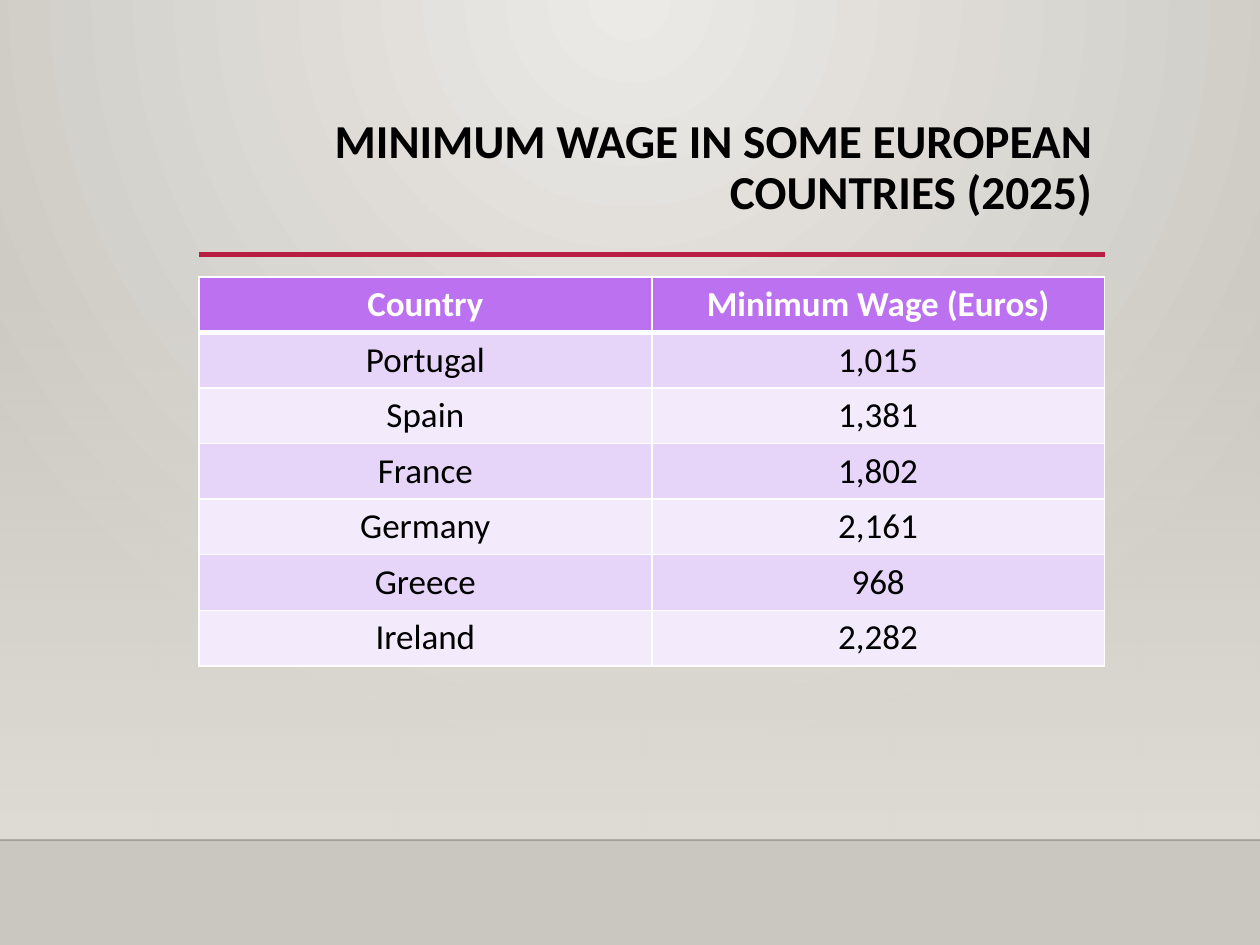
from lxml.etree import SubElement
from pptx import Presentation
from pptx.dml.color import RGBColor
from pptx.enum.shapes import MSO_CONNECTOR, MSO_SHAPE
from pptx.enum.text import MSO_ANCHOR, MSO_AUTO_SIZE, PP_ALIGN
from pptx.oxml.ns import qn
from pptx.util import Pt

BLACK = RGBColor(0x00, 0x00, 0x00)
WHITE = RGBColor(0xFF, 0xFF, 0xFF)
RED = RGBColor(0xB7, 0x1E, 0x42)
WALL_LIGHT = RGBColor(0xEC, 0xEA, 0xE7)
WALL_DARK = RGBColor(0xCA, 0xC7, 0xC1)
WALL_GLOW = RGBColor(0xDF, 0xDB, 0xD5)
HEADER_FILL = RGBColor(0xBC, 0x72, 0xF0)
BAND_FILLS = (RGBColor(0xE7, 0xD5, 0xF9), RGBColor(0xF3, 0xEB, 0xFC))

FONT = "Calibri"
WIDTH, HEIGHT = 720, 540
LEFT, CONTENT_WIDTH = 113.7, 517.5
WALL_TOP, FLOOR_TOP = 158.4, 480

WAGES = [
    ("Country", "Minimum Wage (Euros)"),
    ("Portugal", "1,015"),
    ("Spain", "1,381"),
    ("France", "1,802"),
    ("Germany", "2,161"),
    ("Greece", "968"),
    ("Ireland", "2,282"),
]


def write_text(frame, text, size=20, color=BLACK, bold=False,
               align=PP_ALIGN.CENTER, line_spacing=None):
    paragraph = frame.paragraphs[0]
    paragraph.alignment = align
    paragraph.line_spacing = line_spacing
    run = paragraph.add_run()
    run.text = text
    run.font.name = FONT
    run.font.size = Pt(size)
    run.font.bold = bold
    run.font.color.rgb = color


def set_gradient(fill, first, last):
    fill.gradient()
    for stop, color in zip(fill.gradient_stops, (first, last)):
        stop.color.rgb = color


def set_alpha(properties, percent):
    color = next(properties.iter(qn("a:srgbClr")))
    SubElement(color, qn("a:alpha"), val=str(percent * 1000))


def add_rule(slide, left, top, width, color, weight, opacity=100):
    line = slide.shapes.add_connector(
        MSO_CONNECTOR.STRAIGHT, Pt(left), Pt(top), Pt(left + width), Pt(top))
    line.line.color.rgb = color
    line.line.width = Pt(weight)
    properties = line._element.spPr
    if opacity < 100:
        set_alpha(properties, opacity)
    SubElement(properties, qn("a:effectLst"))


def add_backdrop(slide, left, top, width, height):
    # Radial light from the top centre
    set_gradient(slide.background.fill, WALL_LIGHT, WALL_DARK)
    gradient = next(slide._element.iter(qn("a:gradFill")))
    gradient.remove(gradient.find(qn("a:lin")))
    radial = SubElement(gradient, qn("a:path"), path="circle")
    SubElement(radial, qn("a:fillToRect"), l="43000", t="0", r="43000", b="100000")

    # Wall that fades in towards the floor
    wall = slide.shapes.add_shape(
        MSO_SHAPE.RECTANGLE, Pt(left), Pt(top), Pt(width), Pt(height))
    wall.shadow.inherit = False
    wall.line.fill.background()
    set_gradient(wall.fill, WALL_GLOW, WALL_GLOW)
    wall.fill.gradient_angle = 270
    set_alpha(wall._element.spPr, 0)

    # Floor edge
    add_rule(slide, left, top + height, width, BLACK, 1, opacity=20)


def add_title(slide, left, top, width, height):
    title = slide.shapes.title
    title.left, title.top = Pt(left), Pt(top)
    title.width, title.height = Pt(width), Pt(height)
    frame = title.text_frame
    frame.word_wrap = True
    frame.auto_size = MSO_AUTO_SIZE.NONE
    frame.vertical_anchor = MSO_ANCHOR.TOP
    write_text(frame, "MINIMUM WAGE IN SOME EUROPEAN COUNTRIES (2025)",
               size=27, bold=True, align=PP_ALIGN.RIGHT, line_spacing=0.9)
    add_rule(slide, left, top + height - 0.5, width, RED, 2.5)


def set_borders(cell, bottom):
    properties = cell._tc.get_or_add_tcPr()
    for side, weight in (("L", 1), ("R", 1), ("T", 1), ("B", bottom)):
        border = SubElement(properties, qn(f"a:ln{side}"), w=str(Pt(weight)))
        solid = SubElement(border, qn("a:solidFill"))
        SubElement(solid, qn("a:srgbClr"), val=str(WHITE))


def add_wage_table(slide, left, top, width, height):
    table = slide.shapes.add_table(
        len(WAGES), len(WAGES[0]), Pt(left), Pt(top), Pt(width), Pt(height)).table
    for row_index, values in enumerate(WAGES):
        is_header = row_index == 0
        fill = HEADER_FILL if is_header else BAND_FILLS[(row_index - 1) % 2]
        for column_index, value in enumerate(values):
            cell = table.cell(row_index, column_index)
            set_borders(cell, bottom=3 if is_header else 1)
            cell.fill.solid()
            cell.fill.fore_color.rgb = fill
            write_text(cell.text_frame, value, bold=is_header,
                       color=WHITE if is_header else BLACK)


def main():
    presentation = Presentation()
    presentation.slide_width, presentation.slide_height = Pt(WIDTH), Pt(HEIGHT)
    slide = presentation.slides.add_slide(presentation.slide_layouts[5])
    add_backdrop(slide, 0, WALL_TOP, WIDTH, FLOOR_TOP - WALL_TOP)
    add_title(slide, LEFT, 63.4, CONTENT_WIDTH, 82.6)
    add_wage_table(slide, LEFT, WALL_TOP, CONTENT_WIDTH, 218)
    presentation.save("out.pptx")


if __name__ == "__main__":
    main()
